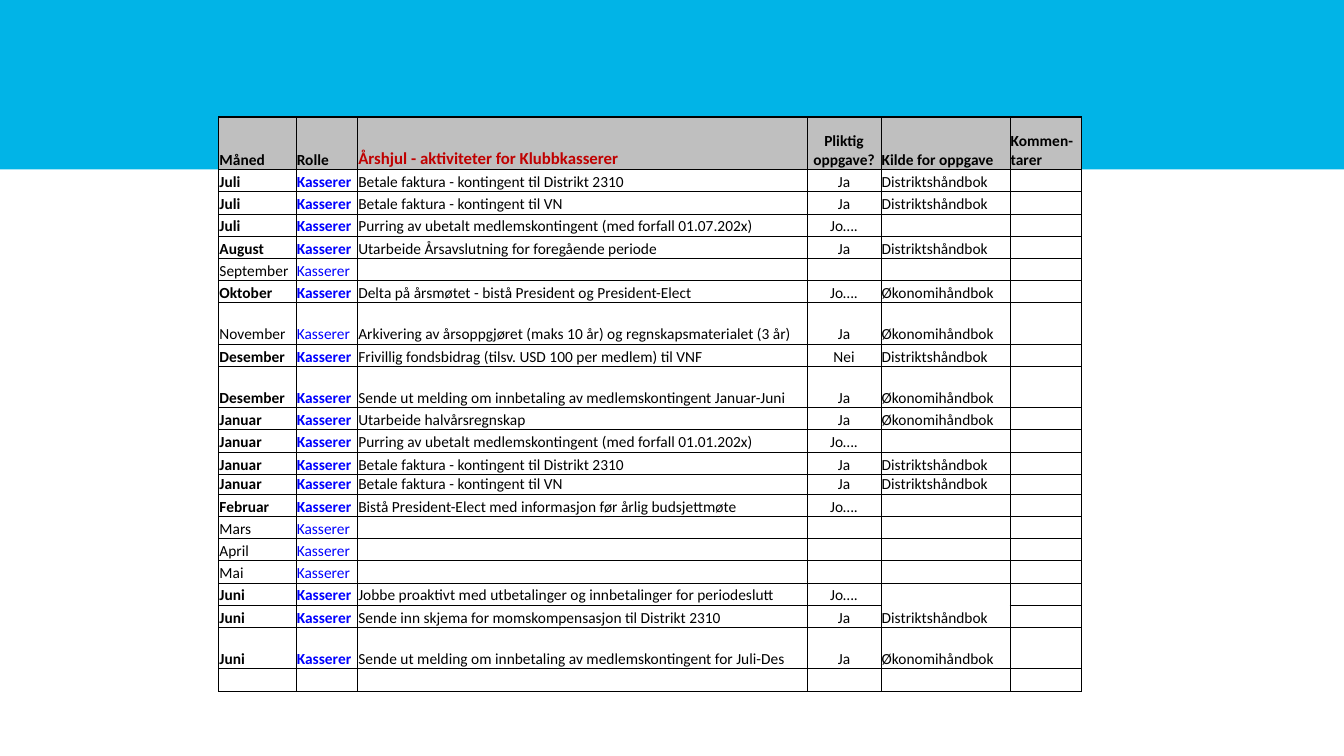
from dataclasses import dataclass

from lxml import etree
from pptx import Presentation
from pptx import util as u
from pptx.dml.color import RGBColor
from pptx.enum import shapes, text
from pptx.oxml import ns


@dataclass(frozen=True)
class Theme:
    """Colours, font, type sizes and line widths of the slide."""
    band: str = "01B4E7"
    header: str = "BFBFBF"
    ink: str = "000000"
    title: str = "C00000"
    role: str = "0000FF"
    font: str = "Calibri"
    body_size: int = 11
    title_size: int = 12
    thin: float = 0.5
    thick: float = 1


THEME = Theme()
MONTH, ROLE, TASK, DUTY, SOURCE, COMMENT = range(6)
COL_WIDTHS = [1.95, 1.55, 11.33, 1.86, 3.25, 1.81]
ROW_HEIGHT = 0.56
SPECIAL_HEIGHTS = {0: 1.32, 7: 1.04, 9: 1.04, 13: 0.5, 20: 1.04, 21: 0.58}
QUIET_MONTHS = {"September", "November", "Mars", "April", "Mai"}
OPEN_EDGE_ROW = 18
DISTRICT, FINANCE = "Distriktshåndbok", "Økonomihåndbok"
HEADER = ["Måned", "Rolle", "Årshjul - aktiviteter for Klubbkasserer",
          "Pliktig oppgave?", "Kilde for oppgave", "Kommen-tarer"]
ACTIVITIES = [
    ("Juli", "Betale faktura - kontingent til Distrikt 2310", "Ja", DISTRICT),
    ("Juli", "Betale faktura - kontingent til VN", "Ja", DISTRICT),
    ("Juli", "Purring av ubetalt medlemskontingent (med forfall 01.07.202x)", "Jo….", ""),
    ("August", "Utarbeide Årsavslutning for foregående periode", "Ja", DISTRICT),
    ("September", "", "", ""),
    ("Oktober", "Delta på årsmøtet - bistå President og President-Elect", "Jo….", FINANCE),
    ("November", "Arkivering av årsoppgjøret (maks 10 år) og regnskapsmaterialet (3 år)",
     "Ja", FINANCE),
    ("Desember", "Frivillig fondsbidrag (tilsv. USD 100 per medlem) til VNF", "Nei", DISTRICT),
    ("Desember", "Sende ut melding om innbetaling av medlemskontingent Januar-Juni",
     "Ja", FINANCE),
    ("Januar", "Utarbeide halvårsregnskap", "Ja", FINANCE),
    ("Januar", "Purring av ubetalt medlemskontingent (med forfall 01.01.202x)", "Jo….", ""),
    ("Januar", "Betale faktura - kontingent til Distrikt 2310", "Ja", DISTRICT),
    ("Januar", "Betale faktura - kontingent til VN", "Ja", DISTRICT),
    ("Februar", "Bistå President-Elect med informasjon før årlig budsjettmøte", "Jo….", ""),
    ("Mars", "", "", ""),
    ("April", "", "", ""),
    ("Mai", "", "", ""),
    ("Juni", "Jobbe proaktivt med utbetalinger og innbetalinger for periodeslutt", "Jo….", ""),
    ("Juni", "Sende inn skjema for momskompensasjon til Distrikt 2310", "Ja", DISTRICT),
    ("Juni", "Sende ut melding om innbetaling av medlemskontingent for Juli-Des",
     "Ja", FINANCE),
]


def add_band(slide, width):
    """Draw the coloured band across the top of the slide."""
    sp = slide.shapes.add_shape(shapes.MSO_SHAPE.RECTANGLE, 0, 0, width, u.Cm(4.27))
    sp.shadow.inherit = False
    sp.fill.solid()
    sp.fill.fore_color.rgb = RGBColor.from_string(THEME.band)
    sp.line.fill.background()


def write_cell(cell, value, size, color, bold, centred):
    """Put one formatted line of text at the bottom of a cell."""
    cell.margin_left = cell.margin_right = cell.margin_top = u.Cm(0.02)
    cell.margin_bottom = 0
    cell.vertical_anchor = text.MSO_ANCHOR.BOTTOM
    p = cell.text_frame.paragraphs[0]
    p.text = value
    if centred:
        p.alignment = text.PP_ALIGN.CENTER
    for r in p.runs:
        r.font.name, r.font.size, r.font.bold = THEME.font, u.Pt(size), bold
        r.font.color.rgb = RGBColor.from_string(color)
    if not value:
        etree.SubElement(p._p, ns.qn("a:endParaRPr"), sz=str(size * 100))


def edge_widths(row, col, last_row):
    """Return the left, right, top and bottom line widths of a cell."""
    thick_top = row == 0 or (row == 1 and col != TASK)
    thick_bottom = row == last_row or (row == 0 and col != TASK)
    edges = [col == MONTH, col == COMMENT, thick_top, thick_bottom]
    widths = [THEME.thick if heavy else THEME.thin for heavy in edges]
    if col == SOURCE and row == OPEN_EDGE_ROW:
        widths[3] = 0
    if col == SOURCE and row == OPEN_EDGE_ROW + 1:
        widths[2] = 0
    return widths


def set_borders(cell, widths):
    """Draw the four edges of a cell, leaving out those of zero width."""
    tc_pr = cell._tc.get_or_add_tcPr()
    for tag, width in zip(("a:lnL", "a:lnR", "a:lnT", "a:lnB"), widths):
        ln = etree.SubElement(tc_pr, ns.qn(tag), w=str(u.Pt(width)))
        if width:
            fill = etree.SubElement(ln, ns.qn("a:solidFill"))
            etree.SubElement(fill, ns.qn("a:srgbClr"), val=THEME.ink)
        else:
            etree.SubElement(ln, ns.qn("a:noFill"))


def set_fill(cell, is_header):
    """Shade header cells and leave the others clear."""
    if is_header:
        cell.fill.solid()
        cell.fill.fore_color.rgb = RGBColor.from_string(THEME.header)
    else:
        cell.fill.background()


def cell_style(row, col, month):
    """Return the type size, colour and weight of a cell's text."""
    if row == 0:
        if col == TASK:
            return THEME.title_size, THEME.title, True
        return THEME.body_size, THEME.ink, True
    color = THEME.role if col == ROLE else THEME.ink
    return THEME.body_size, color, col <= ROLE and month not in QUIET_MONTHS


def add_year_plan(slide):
    """Add the table of the treasurer's activities."""
    rows = [HEADER]
    rows += [[month, "Kasserer", task, duty, source, ""]
             for month, task, duty, source in ACTIVITIES]
    rows.append([""] * len(HEADER))
    heights = [SPECIAL_HEIGHTS.get(i, ROW_HEIGHT) for i in range(len(rows))]
    table = slide.shapes.add_table(
        len(rows), len(HEADER), u.Cm(5.51), u.Cm(2.95),
        u.Cm(sum(COL_WIDTHS)), u.Cm(sum(heights))).table
    table.first_row = table.horz_banding = False
    for column, width in zip(table.columns, COL_WIDTHS):
        column.width = u.Cm(width)
    for i, values in enumerate(rows):
        table.rows[i].height = u.Cm(heights[i])
        for j, value in enumerate(values):
            cell = table.cell(i, j)
            size, color, bold = cell_style(i, j, values[MONTH])
            write_cell(cell, value, size, color, bold, j == DUTY)
            set_borders(cell, edge_widths(i, j, len(rows) - 1))
            set_fill(cell, i == 0)


def main():
    """Build the slide and save it."""
    prs = Presentation()
    prs.slide_width, prs.slide_height = u.Cm(33.87), u.Cm(19.05)
    slide = prs.slides.add_slide(prs.slide_layouts[6])
    add_band(slide, prs.slide_width)
    add_year_plan(slide)
    prs.save("out.pptx")


if __name__ == "__main__":
    main()
